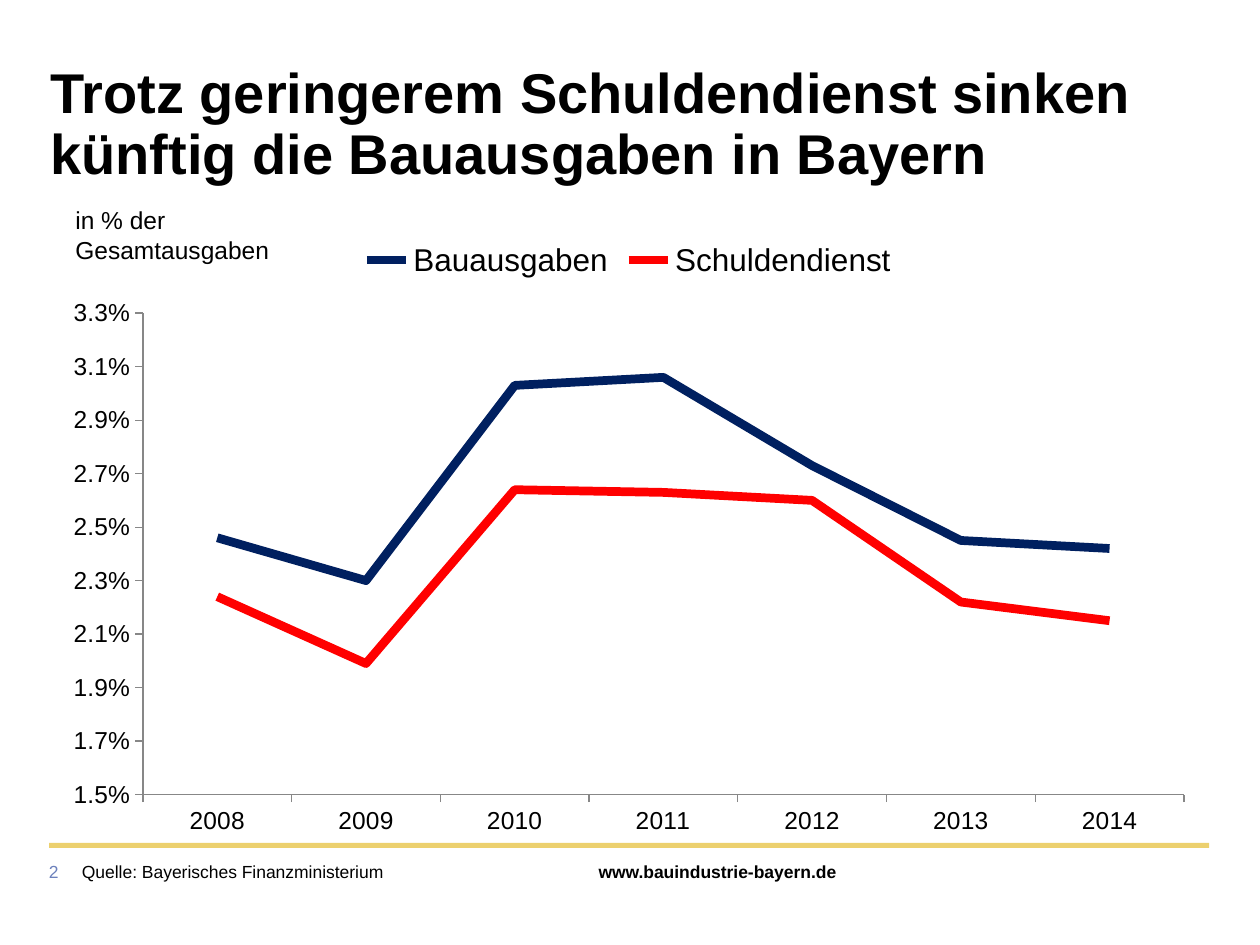
from dataclasses import dataclass

import pptx
import pptx.chart.data
import pptx.dml.color
import pptx.enum.chart
import pptx.enum.shapes
import pptx.enum.text
import pptx.oxml
import pptx.oxml.ns
import pptx.util

Pt = pptx.util.Pt
ANCHOR = pptx.enum.text.MSO_ANCHOR


@dataclass(frozen=True)
class Theme:
    font: str = "Arial"
    text: str = "000000"
    accent: str = "ECD06E"
    page_number: str = "6C81BC"
    axis: str = "878787"
    series: tuple = ("002060", "FF0000")
    title_size: float = 32
    legend_size: float = 18
    label_size: float = 14
    footer_size: float = 10
    series_width: float = 5


def rgb(value):
    return pptx.dml.color.RGBColor.from_string(value)


def format_font(font, theme, size, color=None, bold=False):
    font.name = theme.font
    font.size = Pt(size)
    font.bold = bold
    font.color.rgb = rgb(color or theme.text)


def add_span(para, text, theme, **style):
    span = para.add_run()
    span.text = text
    format_font(span.font, theme, **style)


def set_plot_area(chart, **fractions):
    """Place the inner plot area by fractions of the chart's size."""
    area = chart.plots[0]._element.getparent()
    for old in area.findall(pptx.oxml.ns.qn("c:layout")):
        area.remove(old)
    sides = "".join(f'<c:{side} val="{value}"/>' for side, value in fractions.items())
    area.insert(0, pptx.oxml.parse_xml(
        f'<c:layout {pptx.oxml.ns.nsdecls("c")}><c:manualLayout>'
        '<c:layoutTarget val="inner"/><c:xMode val="edge"/><c:yMode val="edge"/>'
        f'{sides}</c:manualLayout></c:layout>'))


class Page:
    def __init__(self, deck, theme):
        self.theme = theme
        self.slide = deck.slides.add_slide(deck.slide_layouts[6])

    def text(self, text, left, top, width, height, anchor=ANCHOR.TOP,
             inset=(0, 0), spacing=None, **style):
        box = self.slide.shapes.add_textbox(Pt(left), Pt(top), Pt(width), Pt(height))
        frame = box.text_frame
        frame.word_wrap = True
        frame.vertical_anchor = anchor
        frame.margin_left = frame.margin_right = Pt(inset[0])
        frame.margin_top = frame.margin_bottom = Pt(inset[1])
        para = frame.paragraphs[0]
        if spacing:
            para.line_spacing = Pt(spacing)
        add_span(para, text, self.theme, **style)

    def bar(self, left, top, width, height, color):
        bar = self.slide.shapes.add_shape(
            pptx.enum.shapes.MSO_SHAPE.RECTANGLE,
            Pt(left), Pt(top), Pt(width), Pt(height))
        bar.shadow.inherit = False
        bar.fill.solid()
        bar.fill.fore_color.rgb = rgb(color)
        bar.line.fill.background()

    def line_chart(self, categories, series, left, top, width, height):
        theme = self.theme
        data = pptx.chart.data.CategoryChartData(number_format="0.0%")
        data.categories = categories
        for name, values in series.items():
            data.add_series(name, values)
        chart = self.slide.shapes.add_chart(
            pptx.enum.chart.XL_CHART_TYPE.LINE,
            Pt(left), Pt(top), Pt(width), Pt(height), data).chart
        chart.has_title = False
        format_font(chart.font, theme, theme.legend_size)
        chart.has_legend = True
        chart.legend.position = pptx.enum.chart.XL_LEGEND_POSITION.TOP
        chart.legend.include_in_layout = False
        chart.plots[0].vary_by_categories = False

        for line, color in zip(chart.plots[0].series, theme.series):
            line.smooth = False
            line.marker.style = pptx.enum.chart.XL_MARKER_STYLE.NONE
            line.format.line.color.rgb = rgb(color)
            line.format.line.width = Pt(theme.series_width)

        for axis in (chart.category_axis, chart.value_axis):
            axis.has_major_gridlines = False
            axis.major_tick_mark = pptx.enum.chart.XL_TICK_MARK.OUTSIDE
            axis.minor_tick_mark = pptx.enum.chart.XL_TICK_MARK.NONE
            axis.format.line.color.rgb = rgb(theme.axis)
            axis.format.line.width = Pt(0.75)
            format_font(axis.tick_labels.font, theme, theme.label_size)

        scale = chart.value_axis
        scale.minimum_scale, scale.maximum_scale, scale.major_unit = 0.015, 0.033, 0.002
        scale.tick_labels.number_format = "0.0%"
        scale.tick_labels.number_format_is_linked = False
        set_plot_area(chart, x=0.08, y=0.14, w=0.9, h=0.78)


def main():
    theme = Theme()
    deck = pptx.Presentation()
    deck.slide_width, deck.slide_height = Pt(720), Pt(540)
    page = Page(deck, theme)

    page.bar(28, 481.7, 663, 2.9, theme.accent)
    page.line_chart(
        [str(year) for year in range(2008, 2015)],
        {"Bauausgaben": (0.0246, 0.023, 0.0303, 0.0306, 0.0273, 0.0245, 0.0242),
         "Schuldendienst": (0.0224, 0.0199, 0.0264, 0.0263, 0.026, 0.0222, 0.0215)},
        28.8, 129.6, 661, 352.8)
    page.text("Trotz geringerem Schuldendienst sinken künftig die Bauausgaben in Bayern",
              28.8, 36, 662.4, 86.4, spacing=35, size=theme.title_size, bold=True)
    page.text("in % der Gesamtausgaben", 36, 113.8, 125.3, 41,
              inset=(7.2, 3.6), size=theme.label_size)

    footer_top, footer_height = 491.8, 12
    page.text("2", 28, footer_top, 16, footer_height, anchor=ANCHOR.MIDDLE,
              size=theme.footer_size, color=theme.page_number)
    page.text("Quelle: Bayerisches Finanzministerium", 46.8, footer_top, 281.5,
              footer_height, anchor=ANCHOR.MIDDLE, size=theme.footer_size)
    page.text("www.bauindustrie-bayern.de", 342, footer_top, 166.3, footer_height,
              size=theme.footer_size, bold=True)

    deck.save("out.pptx")


if __name__ == "__main__":
    main()
